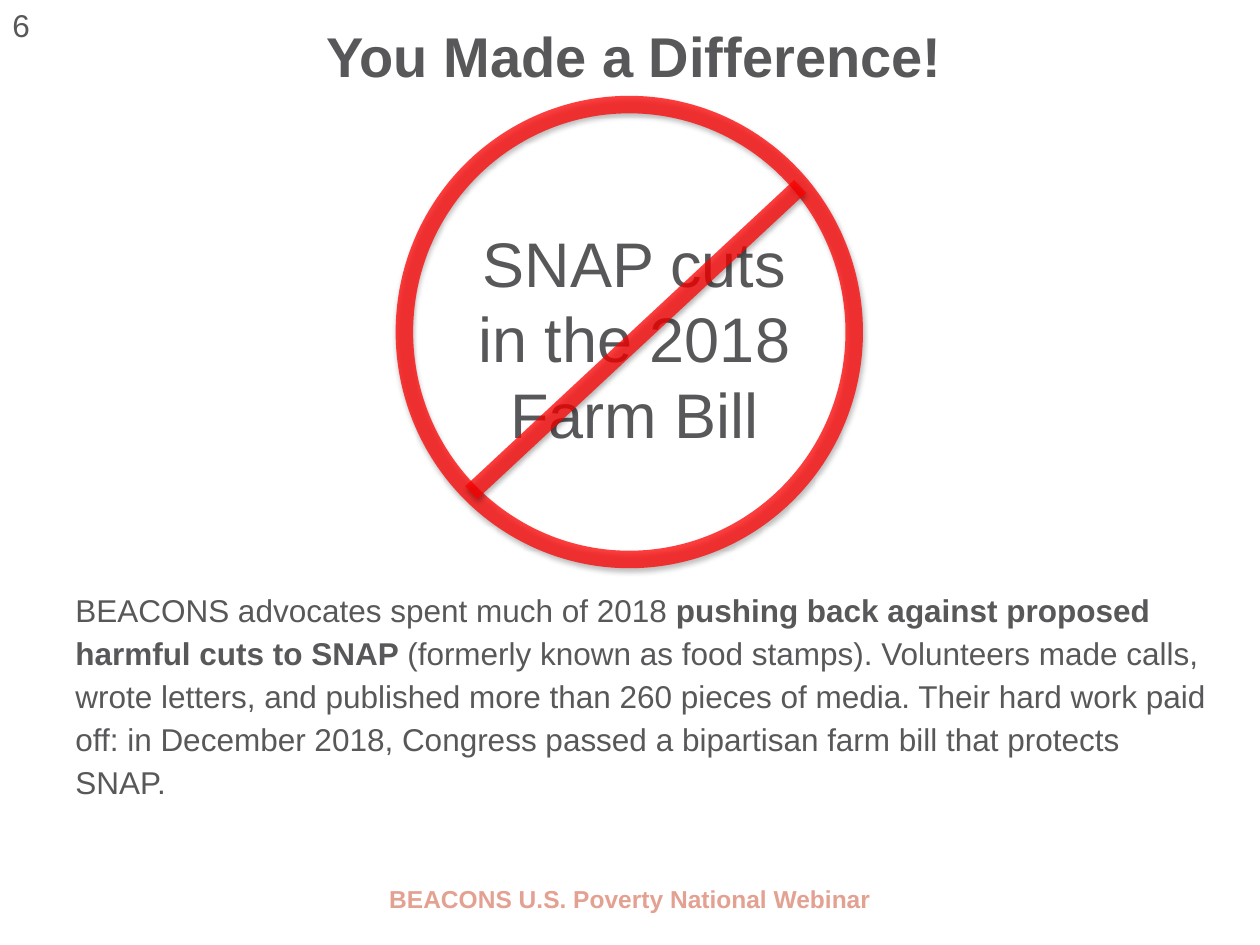
from lxml import etree
from pptx import Presentation
from pptx.dml.color import RGBColor
from pptx.enum.shapes import MSO_CONNECTOR, MSO_SHAPE
from pptx.enum.text import MSO_ANCHOR, PP_ALIGN
from pptx.oxml.ns import qn
from pptx.util import Inches, Pt

LEFT, CENTER = PP_ALIGN.LEFT, PP_ALIGN.CENTER
TOP, MIDDLE = MSO_ANCHOR.TOP, MSO_ANCHOR.MIDDLE
OVAL = MSO_SHAPE.OVAL
STRAIGHT = MSO_CONNECTOR.STRAIGHT

COLORS = {"text": "58585B", "footer": "E3A192", "ban": "FF0000", "shadow": "000000"}
FONT = "Arial"
WIDTH, HEIGHT = Inches(10), Inches(7.5)


def place(x, y, x_end, y_end):
    """Turn percentages of the slide's width and height into lengths."""
    return [round(share * side / 100)
            for share, side in zip((x, y, x_end, y_end), (WIDTH, HEIGHT) * 2)]


def add_text(slide, area, runs, size, color="text", align=LEFT, anchor=TOP,
             wrap=True, line_spacing=None):
    frame = slide.shapes.add_textbox(*place(*area)).text_frame
    frame.word_wrap = wrap
    frame.vertical_anchor = anchor
    paragraph = frame.paragraphs[0]
    paragraph.alignment = align
    if line_spacing:
        paragraph.line_spacing = line_spacing
    for text, bold in runs:
        run = paragraph.add_run()
        run.text = text
        run.font.name = FONT
        run.font.size = Pt(size)
        run.font.bold = bold
        run.font.color.rgb = RGBColor.from_string(COLORS[color])


def add_alpha(color_element, percent):
    etree.SubElement(color_element, qn("a:alpha"), val=str(percent * 1000))


def style_ban_stroke(shape, shadow_opacity):
    shape.line.color.rgb = RGBColor.from_string(COLORS["ban"])
    shape.line.width = Pt(10)
    properties = shape._element.spPr
    add_alpha(properties.find(".//" + qn("a:ln") + "//" + qn("a:srgbClr")), 75)
    effects = etree.SubElement(properties, qn("a:effectLst"))
    shadow = etree.SubElement(
        effects, qn("a:outerShdw"), blurRad=str(Pt(3.1)), dist=str(Pt(1.8)),
        dir="5400000", rotWithShape="0")
    add_alpha(etree.SubElement(shadow, qn("a:srgbClr"), val=COLORS["shadow"]),
              shadow_opacity)


def add_ring(slide, area):
    ring = slide.shapes.add_shape(OVAL, *place(*area))
    ring.fill.background()
    style_ban_stroke(ring, 35)


def add_slash(slide, ends):
    style_ban_stroke(slide.shapes.add_connector(STRAIGHT, *place(*ends)), 38)


def main():
    presentation = Presentation()
    presentation.slide_width, presentation.slide_height = WIDTH, HEIGHT
    slide = presentation.slides.add_slide(presentation.slide_layouts[6])

    add_text(slide, (0, 0, 3.4, 5.33), [("6", False)], 18, wrap=False)
    add_text(slide, (0, 92.8, 100, 4.53),
             [("BEACONS U.S. Poverty National Webinar", True)], 14,
             color="footer", align=CENTER, anchor=MIDDLE)
    add_text(slide, (3.4, 2.5, 93.9, 6.67), [("You Made a Difference!", True)], 32,
             align=CENTER, anchor=MIDDLE)
    add_text(slide, (5, 61.33, 92.3, 25.33), [
        ("BEACONS advocates spent much of 2018 ", False),
        ("pushing back against proposed harmful cuts to SNAP ", True),
        ("(formerly known as food stamps). Volunteers made calls, wrote letters, "
         "and published more than 260 pieces of media. Their hard work paid off: "
         "in December 2018, Congress passed a bipartisan farm bill that protects "
         "SNAP.", False),
    ], 18, line_spacing=1.14)
    add_ring(slide, (32.1, 11.07, 35.7, 48.13))
    add_text(slide, (35.5, 23.07, 29.7, 25.6),
             [("SNAP cuts in the 2018 Farm Bill", False)], 36, align=CENTER)
    add_slash(slide, (63.5, 19.73, 37.4, 52.13))

    presentation.save("out.pptx")


if __name__ == "__main__":
    main()
